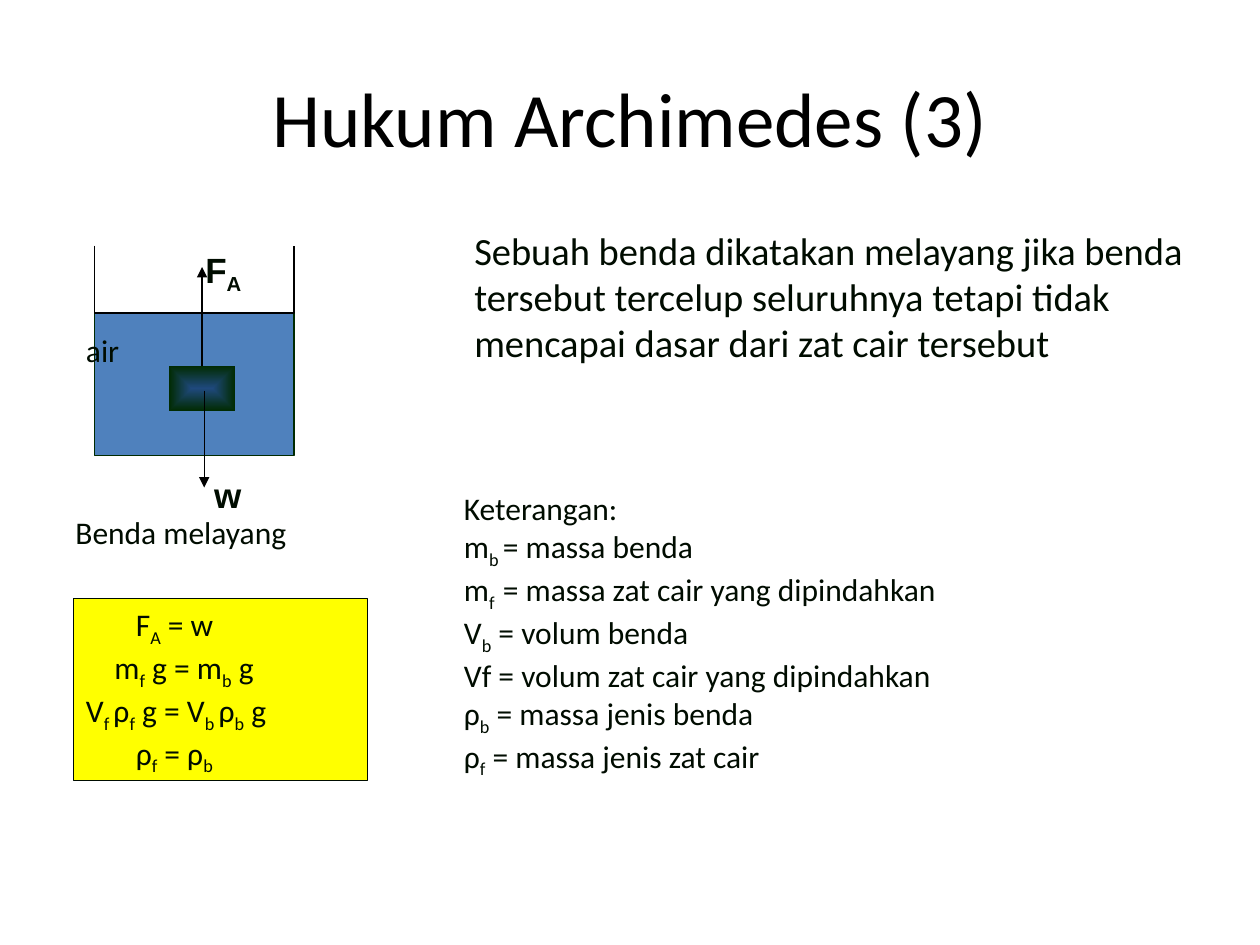
from lxml import etree
from pptx import Presentation
from pptx.dml.color import RGBColor
from pptx.enum.shapes import MSO_CONNECTOR, MSO_SHAPE
from pptx.enum.text import MSO_ANCHOR, PP_ALIGN
from pptx.oxml import parse_xml
from pptx.oxml.ns import nsdecls, qn
from pptx.util import Pt

COLORS = {
    "title": "000000",
    "text": "000C00",
    "line": "000000",
    "edge": "002A00",
    "water": "4F81BD",
    "core": "1F497D",
    "formula": "FFFF00",
}
BODY = {"name": "Calibri", "size": Pt(18)}
LEAD = {"name": "Calibri", "size": Pt(22)}
TITLE = {"name": "Calibri", "size": Pt(44)}
FORCE = {"name": "Arial", "size": Pt(20), "bold": True}

FORMULAS = [
    ("F|A| = w", 28.5),
    ("m|f| g = m|b| g", 16.3),
    ("V|f |ρ|f| g = V|b |ρ|b| g", 0),
    ("ρ|f| = ρ|b|", 28.5),
]
LEGEND = [
    "Keterangan:",
    "m|b |= massa benda",
    "m|f  |= massa zat cair yang dipindahkan",
    "V|b| = volum benda",
    "Vf = volum zat cair yang dipindahkan",
    "ρ|b| = massa jenis benda",
    "ρ|f| = massa jenis zat cair",
]


def rgb(name):
    return RGBColor.from_string(COLORS[name])


def pts(*values):
    return [Pt(v) for v in values]


def write(tf, lines, fmt, color="text", align=PP_ALIGN.LEFT):
    tf.word_wrap = True
    for i, line in enumerate(lines):
        p = tf.paragraphs[0] if i == 0 else tf.add_paragraph()
        p.alignment = align
        for j, part in enumerate(line.split("|")):
            if not part:
                continue
            r = p.add_run()
            r.text = part
            for key, value in fmt.items():
                setattr(r.font, key, value)
            r.font.color.rgb = rgb(color)
            if j % 2:
                r.font._element.set("baseline", "-25000")


def add_text(shapes, box, lines, fmt, **options):
    tf = shapes.add_textbox(*pts(*box)).text_frame
    write(tf, lines, fmt, **options)
    return tf


def add_rect(shapes, box, fill, line=None):
    sp = shapes.add_shape(MSO_SHAPE.RECTANGLE, *pts(*box))
    sp.shadow.inherit = False
    sp.fill.solid()
    sp.fill.fore_color.rgb = rgb(fill)
    if line:
        sp.line.color.rgb = rgb(line)
        sp.line.width = Pt(0.75)
    else:
        sp.line.fill.background()
    return sp


def add_arrow(shapes, x, y1, y2):
    cn = shapes.add_connector(MSO_CONNECTOR.STRAIGHT, *pts(x, y1, x, y2))
    cn.line.color.rgb = rgb("line")
    cn.line.width = Pt(0.75)
    etree.SubElement(cn.line._get_or_add_ln(), qn("a:tailEnd"), type="triangle")
    etree.SubElement(cn._element.spPr, qn("a:effectLst"))
    return cn


def shade_from_center(sp):
    sp.fill.gradient()
    for stop, name in zip(sp.fill.gradient_stops, ("core", "edge")):
        stop.color.rgb = rgb(name)
    grad = sp._element.spPr.find(qn("a:gradFill"))
    lin = grad.find(qn("a:lin"))
    grad.replace(lin, parse_xml(
        f'<a:path {nsdecls("a")} path="shape">'
        '<a:fillToRect l="50000" t="50000" r="50000" b="50000"/></a:path>'))


def add_title(slide, box):
    tf = add_text(slide.shapes, box, ["Hukum Archimedes (3)"], TITLE,
                  color="title", align=PP_ALIGN.CENTER)
    tf.vertical_anchor = MSO_ANCHOR.MIDDLE


def add_tank(slide, box):
    x, y, w, h = box
    shapes = slide.shapes.add_group_shape().shapes
    surface = y + 38.5
    add_rect(shapes, (x, surface, w, y + h - surface), "water", "edge")

    fb = shapes.build_freeform(*pts(x, y))
    corners = [(x, surface), (x + w, surface), (x + w, y)]
    fb.add_line_segments([pts(*c) for c in corners], close=False)
    walls = fb.convert_to_shape()
    walls.shadow.inherit = False
    walls.fill.background()
    walls.line.color.rgb = rgb("line")
    walls.line.width = Pt(0.75)

    block = add_rect(shapes, (x + 42.5, y + 68.5, 38, 26), "core")
    shade_from_center(block)
    add_arrow(shapes, x + 62.7, y + 82.8, y + 138.2)
    lift = add_arrow(shapes, x + 61.5, y + 68.5, y + 12.2)
    lift.begin_connect(block, 0)

    add_text(shapes, (x + 61.2, y + 126.8, 29, 31), ["w"], FORCE)
    add_text(shapes, (x + 56.2, y - 2.2, 46, 31), ["F|A|"], FORCE)
    add_text(shapes, (x - 12, y + 45.4, 84, 29), ["air"], BODY)


def add_formulas(slide, box):
    sp = add_rect(slide.shapes, box, "formula", "text")
    sp.text_frame.vertical_anchor = MSO_ANCHOR.TOP
    write(sp.text_frame, [line for line, _ in FORMULAS], BODY)
    for p, (_, indent) in zip(sp.text_frame.paragraphs, FORMULAS):
        p._p.get_or_add_pPr().set("marL", str(Pt(indent)))


def add_definition(slide, box):
    add_text(slide.shapes, box, [
        "Sebuah benda dikatakan melayang jika benda tersebut tercelup "
        "seluruhnya tetapi tidak mencapai dasar dari zat cair tersebut"], LEAD)


def main():
    prs = Presentation()
    prs.slide_width, prs.slide_height = pts(720, 540)
    slide = prs.slides.add_slide(prs.slide_layouts[6])
    add_title(slide, (36, 21.6, 648, 90))
    add_text(slide.shapes, (36, 289.5, 192, 29), ["Benda melayang"], BODY)
    add_formulas(slide, (42, 342, 168, 104))
    add_definition(slide, (264, 126, 426, 113))
    add_tank(slide, (54, 140.4, 114, 120))
    add_text(slide.shapes, (258, 276, 384, 175), LEGEND, BODY)
    prs.save("out.pptx")


if __name__ == "__main__":
    main()
